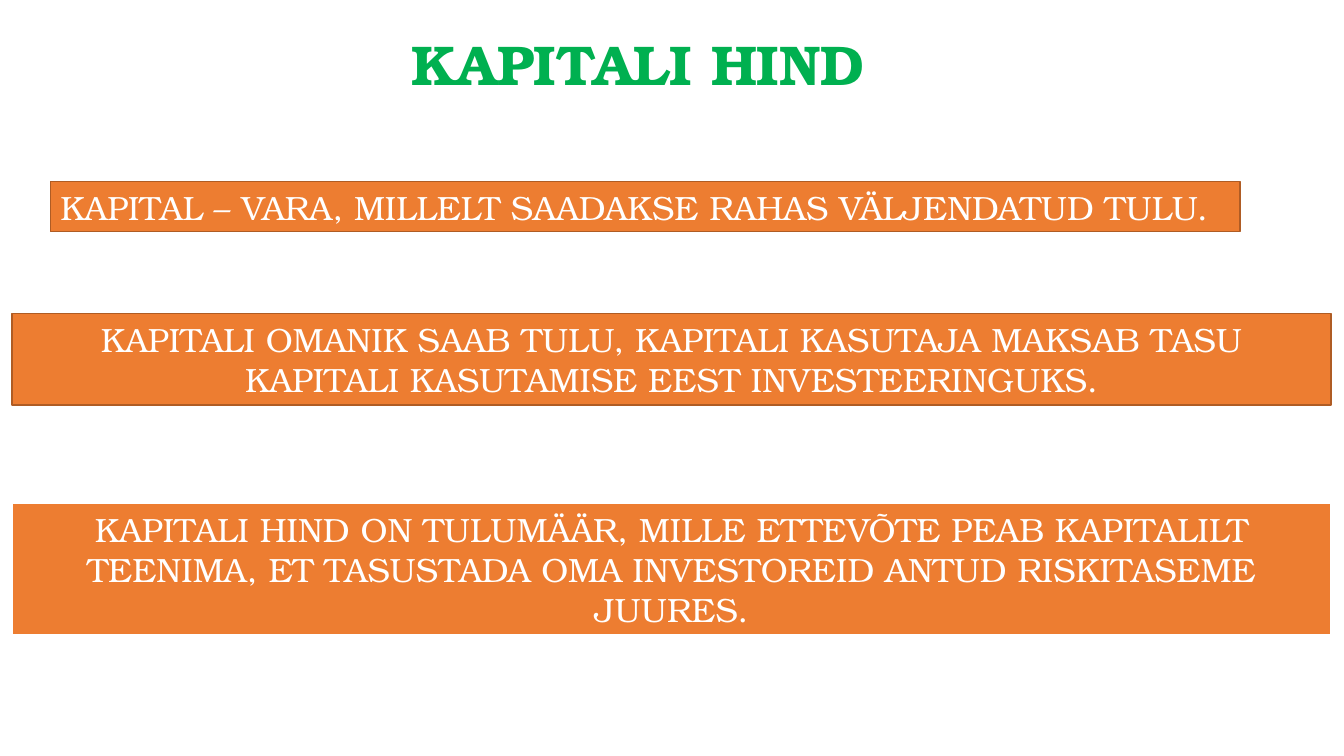
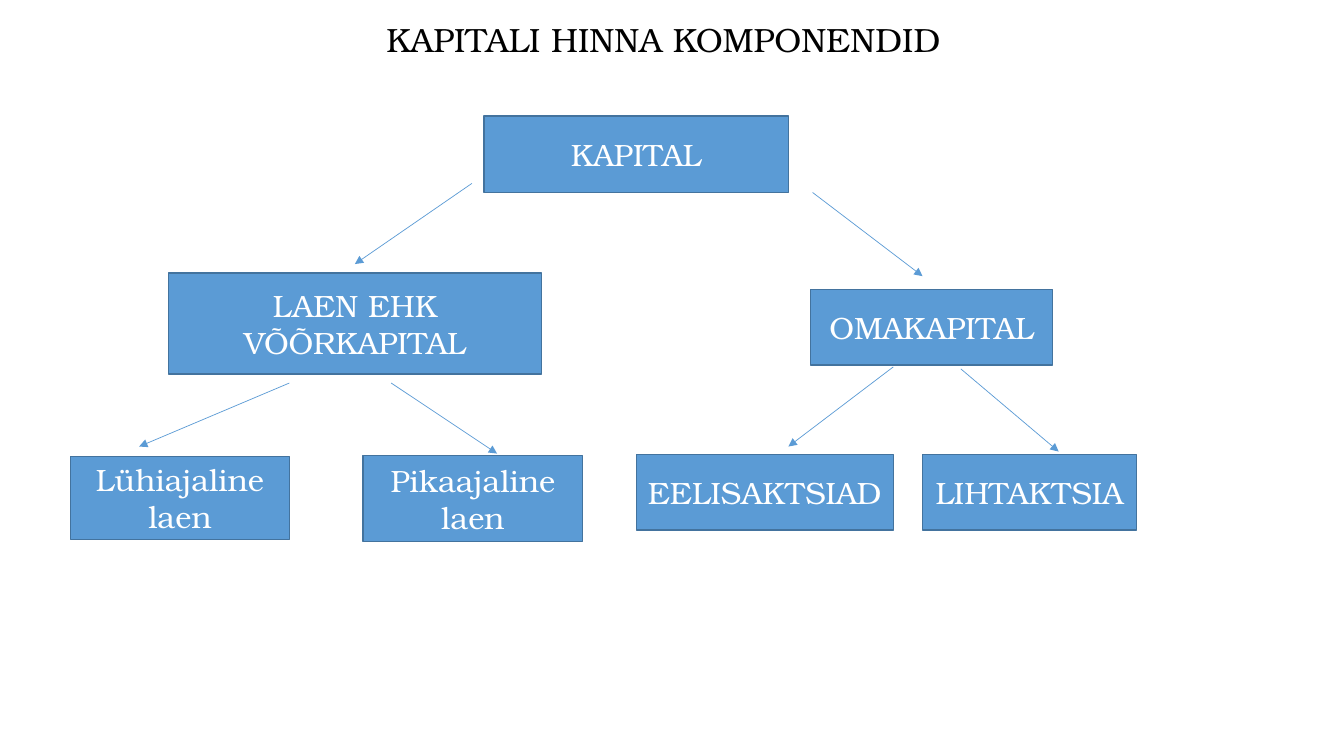
from dataclasses import dataclass

from lxml.etree import SubElement
from pptx import Presentation
from pptx.dml.color import RGBColor as Rgb
from pptx.enum.shapes import MSO_CONNECTOR as Link, MSO_SHAPE as Form
from pptx.enum.text import MSO_ANCHOR as Anchor, MSO_AUTO_SIZE as Fit, PP_ALIGN as Align
from pptx.oxml.ns import qn
from pptx.util import Pt

SCALE = 9144
LAYOUT = 5


@dataclass(frozen=True)
class Theme:
    font: str = "TeX Gyre Bonum"
    green: str = "00B050"
    black: str = "000000"
    white: str = "FFFFFF"
    orange: str = "ED7D31"
    rust: str = "AF5C24"
    blue: str = "5B9BD5"
    navy: str = "43739E"
    head: int = 40
    text: int = 24
    node: int = 22
    edge: float = 1
    frame: float = 1.5
    thin: float = 0.5


def px(*sizes):
    return [size * SCALE for size in sizes]


class Deck:
    """Holds the theme and the current slide, and draws each kind of element."""

    def __init__(self, theme):
        self.theme = theme
        self.file = Presentation()
        self.file.slide_width, self.file.slide_height = px(1333, 750)

    def label(self, frame, text, size, color, align, anchor, bold=False):
        frame.word_wrap = True
        frame.vertical_anchor = anchor
        frame.text = text
        line = frame.paragraphs[0]
        line.alignment = align
        font = line.font
        font.name, font.size, font.bold = self.theme.font, Pt(size), bold
        font.color.rgb = Rgb.from_string(color)
        return line

    def start(self, text, area, size, color, anchor, bold=False):
        layout = self.file.slide_layouts[LAYOUT]
        self.slide = self.file.slides.add_slide(layout)
        title = self.slide.shapes.title
        title.left, title.top, title.width, title.height = px(*area)
        frame = title.text_frame
        frame.auto_size = Fit.NONE
        line = self.label(frame, text, size, color, Align.CENTER, anchor, bold)
        line.line_spacing = 0.9

    def stroke(self, line, color, width):
        line.color.rgb = Rgb.from_string(color)
        line.width = Pt(width)

    def box(self, text, area, fill, edge, width, size, align=Align.CENTER):
        shape = self.slide.shapes.add_shape(Form.RECTANGLE, *px(*area))
        shape.shadow.inherit = False
        shape.fill.solid()
        shape.fill.fore_color.rgb = Rgb.from_string(fill)
        self.stroke(shape.line, edge, width)
        self.label(shape.text_frame, text, size, self.theme.white, align, Anchor.MIDDLE)

    def arrow(self, *ends):
        link = self.slide.shapes.add_connector(Link.STRAIGHT, *px(*ends))
        self.stroke(link.line, self.theme.blue, self.theme.thin)
        props = link.element.spPr
        SubElement(props.find(qn("a:ln")), qn("a:tailEnd"), type="triangle")
        SubElement(props, qn("a:effectLst"))


def price(deck):
    theme = deck.theme
    deck.start("KAPITALI HIND", (133, 32, 1000, 76), theme.head, theme.green, Anchor.TOP, True)
    bands = [
        ("KAPITAL – VARA, MILLELT SAADAKSE RAHAS VÄLJENDATUD TULU.",
         (50, 180, 1180, 50), theme.rust, theme.edge, Align.LEFT),
        ("KAPITALI OMANIK SAAB TULU, KAPITALI KASUTAJA MAKSAB TASU "
         "KAPITALI KASUTAMISE EEST INVESTEERINGUKS.",
         (12, 311, 1308, 91), theme.rust, theme.edge, Align.CENTER),
        ("KAPITALI HIND ON TULUMÄÄR, MILLE ETTEVÕTE PEAB KAPITALILT "
         "TEENIMA, ET TASUSTADA OMA INVESTOREID ANTUD RISKITASEME JUURES.",
         (12, 499, 1308, 131), theme.white, theme.frame, Align.CENTER),
    ]
    for text, area, edge, width, align in bands:
        deck.box(text, area, theme.orange, edge, width, theme.text, align)


def parts(deck):
    theme = deck.theme
    deck.start("KAPITALI HINNA KOMPONENDID", (172, 9, 972, 55),
               theme.text, theme.black, Anchor.BOTTOM)
    nodes = {
        "KAPITAL": (480, 115, 302, 76),
        "LAEN EHK VÕÕRKAPITAL": (167, 271, 370, 100),
        "OMAKAPITAL": (804, 287, 240, 75),
        "Lühiajaline laen": (70, 453, 217, 82),
        "Pikaajaline laen": (360, 452, 218, 85),
        "EELISAKTSIAD": (631, 451, 255, 75),
        "LIHTAKTSIA": (915, 451, 212, 75),
    }
    for text, area in nodes.items():
        deck.box(text, area, theme.blue, theme.navy, theme.edge, theme.node)
    arrows = [
        (468, 182, 352, 262),
        (806, 191, 915, 274),
        (287, 380, 138, 443),
        (388, 380, 493, 450),
        (886, 364, 782, 443),
        (953, 366, 1050, 448),
    ]
    for ends in arrows:
        deck.arrow(*ends)


def main():
    deck = Deck(Theme())
    price(deck)
    parts(deck)
    deck.file.save("out.pptx")


if __name__ == "__main__":
    main()
